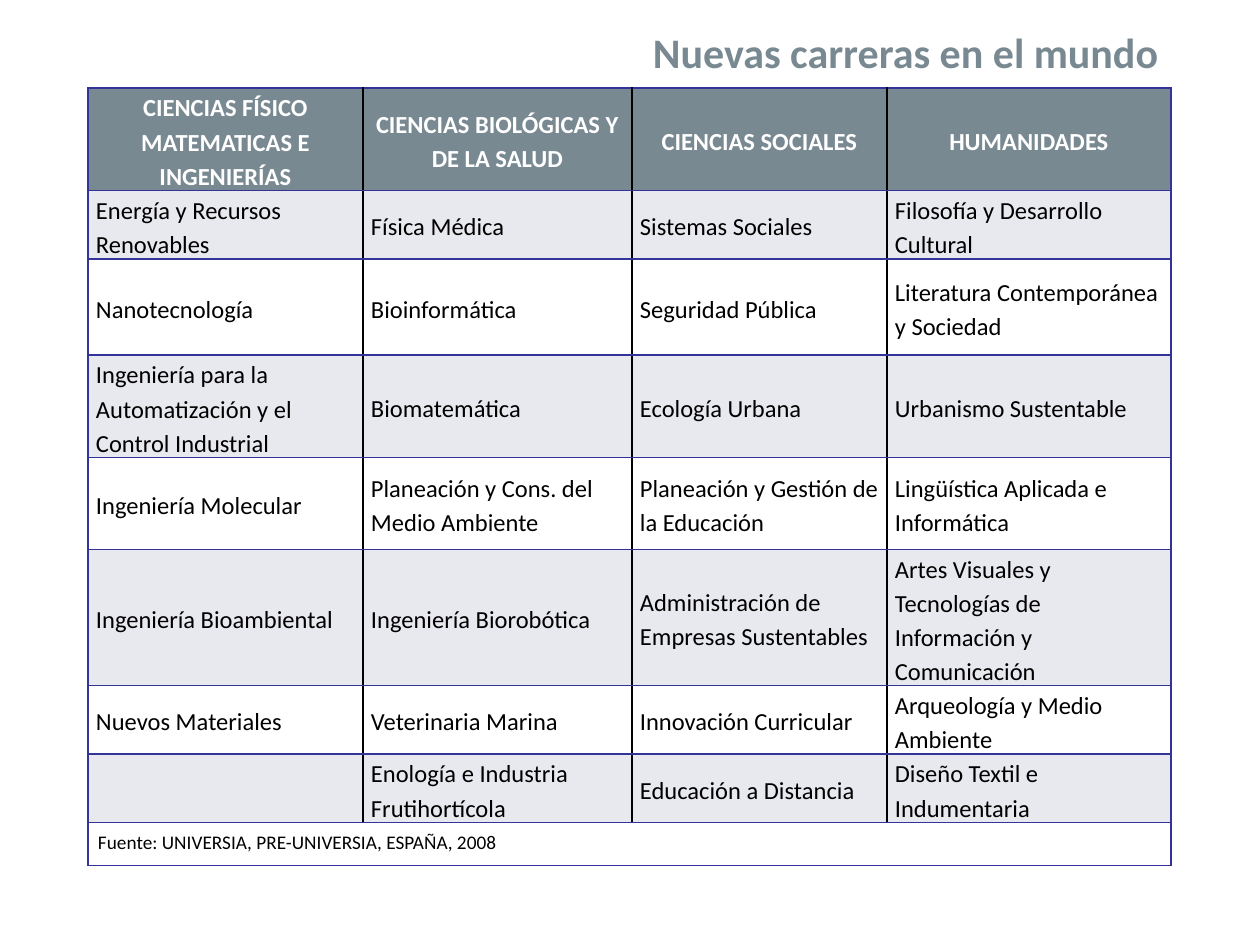
from dataclasses import dataclass

from lxml import etree
from pptx import Presentation
from pptx.dml.color import RGBColor
from pptx.enum.text import MSO_ANCHOR, MSO_AUTO_SIZE, PP_ALIGN
from pptx.oxml.ns import qn
from pptx.util import Emu, Inches, Pt

LEFT, CENTER, RIGHT = PP_ALIGN.LEFT, PP_ALIGN.CENTER, PP_ALIGN.RIGHT
TOP, MIDDLE = MSO_ANCHOR.TOP, MSO_ANCHOR.MIDDLE
PX_PER_INCH = 126
TITLE_ONLY = 5


@dataclass(frozen=True)
class Theme:
    font: str = "Calibri"
    slate: str = "798992"
    band: str = "E8E8EF"
    white: str = "FFFFFF"
    ink: str = "000000"
    rule: str = "333399"
    title_size: int = 24
    body_size: int = 14
    source_size: int = 11


@dataclass(frozen=True)
class CellStyle:
    fill: str | None
    color: str
    size: int
    bold: bool = False
    align: PP_ALIGN = LEFT
    anchor: MSO_ANCHOR = MIDDLE
    margins: tuple[int, int, int, int] = (8, 1, 8, 0)


THEME = Theme()
HEADER = CellStyle(THEME.slate, THEME.white, THEME.body_size, True, CENTER)
BANDED = CellStyle(THEME.band, THEME.ink, THEME.body_size)
PLAIN = CellStyle(None, THEME.ink, THEME.body_size)
SOURCE = CellStyle(None, THEME.ink, THEME.source_size, anchor=TOP,
                   margins=(10, 5, 10, 5))

COLUMN_WIDTHS = (275, 269, 255, 284)
ROW_HEIGHTS = (96, 60, 96, 92, 92, 123, 60, 64, 43)
CAREERS = (
    ("CIENCIAS FÍSICO MATEMATICAS E INGENIERÍAS",
     "CIENCIAS BIOLÓGICAS Y DE LA SALUD", "CIENCIAS SOCIALES", "HUMANIDADES"),
    ("Energía y Recursos Renovables", "Física Médica",
     "Sistemas Sociales", "Filosofía y Desarrollo Cultural"),
    ("Nanotecnología", "Bioinformática",
     "Seguridad Pública", "Literatura Contemporánea y Sociedad"),
    ("Ingeniería para la Automatización y el Control Industrial",
     "Biomatemática", "Ecología Urbana", "Urbanismo Sustentable"),
    ("Ingeniería Molecular", "Planeación y Cons. del Medio Ambiente",
     "Planeación y Gestión de la Educación",
     "Lingüística Aplicada e Informática"),
    ("Ingeniería Bioambiental", "Ingeniería Biorobótica",
     "Administración de Empresas Sustentables",
     "Artes Visuales y Tecnologías de Información y Comunicación"),
    ("Nuevos Materiales", "Veterinaria Marina",
     "Innovación Curricular", "Arqueología y Medio Ambiente"),
    ("", "Enología e Industria Frutihortícola",
     "Educación a Distancia", "Diseño Textil e Indumentaria"),
)
SOURCE_LINE = "Fuente: UNIVERSIA, PRE-UNIVERSIA, ESPAÑA, 2008"


def px(length: int) -> Emu:
    return Emu(round(length * Inches(1) / PX_PER_INCH))


def format_runs(paragraph, size: int, color: str, bold: bool) -> None:
    for run in paragraph.runs:
        run.font.name = THEME.font
        run.font.size = Pt(size)
        run.font.bold = bold
        run.font.color.rgb = RGBColor.from_string(color)


def set_borders(cell, left: str, right: str) -> None:
    """Add 1 pt borders; they must come before the fill in the cell."""
    properties = cell._tc.get_or_add_tcPr()
    sides = {"a:lnL": left, "a:lnR": right,
             "a:lnT": THEME.rule, "a:lnB": THEME.rule}
    for position, (tag, color) in enumerate(sides.items()):
        line = etree.Element(qn(tag), w=str(Pt(1)))
        fill = etree.SubElement(line, qn("a:solidFill"))
        etree.SubElement(fill, qn("a:srgbClr"), val=color)
        properties.insert(position, line)


def fill_cell(cell, text: str, style: CellStyle) -> None:
    cell.vertical_anchor = style.anchor
    (cell.margin_left, cell.margin_top,
     cell.margin_right, cell.margin_bottom) = map(px, style.margins)
    if style.fill:
        cell.fill.solid()
        cell.fill.fore_color.rgb = RGBColor.from_string(style.fill)
    else:
        cell.fill.background()
    cell.text_frame.text = text
    paragraph = cell.text_frame.paragraphs[0]
    paragraph.alignment = style.align
    paragraph.line_spacing = 1.15
    paragraph.space_after = Pt(10)
    format_runs(paragraph, style.size, style.color, style.bold)


def add_title(slide, text: str) -> None:
    title = slide.shapes.title
    title.left, title.top, title.width, title.height = map(
        px, (319, 20, 852, 63))
    frame = title.text_frame
    frame.text = text
    frame.word_wrap = True
    frame.auto_size = MSO_AUTO_SIZE.SHAPE_TO_FIT_TEXT
    frame.vertical_anchor = TOP
    frame.paragraphs[0].alignment = RIGHT
    format_runs(frame.paragraphs[0], THEME.title_size, THEME.slate, True)


def add_careers_table(slide) -> None:
    frame = slide.shapes.add_table(
        len(ROW_HEIGHTS), len(COLUMN_WIDTHS),
        px(88), px(88), px(sum(COLUMN_WIDTHS)), px(780))
    table = frame.table
    table.first_row = table.horz_banding = False
    for column, width in zip(table.columns, COLUMN_WIDTHS):
        column.width = px(width)
    for row, height in zip(table.rows, ROW_HEIGHTS):
        row.height = px(height)
    frame.height = px(780)

    # Header and careers, with shading on every other row
    last = len(COLUMN_WIDTHS) - 1
    for r, names in enumerate(CAREERS):
        style = HEADER if r == 0 else BANDED if r % 2 else PLAIN
        for c, name in enumerate(names):
            cell = table.cell(r, c)
            fill_cell(cell, name, style)
            set_borders(cell, THEME.rule if c == 0 else THEME.ink,
                        THEME.rule if c == last else THEME.ink)

    # Source line across the whole table
    bottom = len(CAREERS)
    source = table.cell(bottom, 0)
    source.merge(table.cell(bottom, last))
    fill_cell(source, SOURCE_LINE, SOURCE)
    for c in range(last + 1):
        set_borders(table.cell(bottom, c), THEME.rule, THEME.rule)


def main() -> None:
    deck = Presentation()
    deck.slide_width, deck.slide_height = px(1260), px(945)
    slide = deck.slides.add_slide(deck.slide_layouts[TITLE_ONLY])
    add_title(slide, "Nuevas carreras en el mundo")
    add_careers_table(slide)
    deck.save("out.pptx")


if __name__ == "__main__":
    main()
